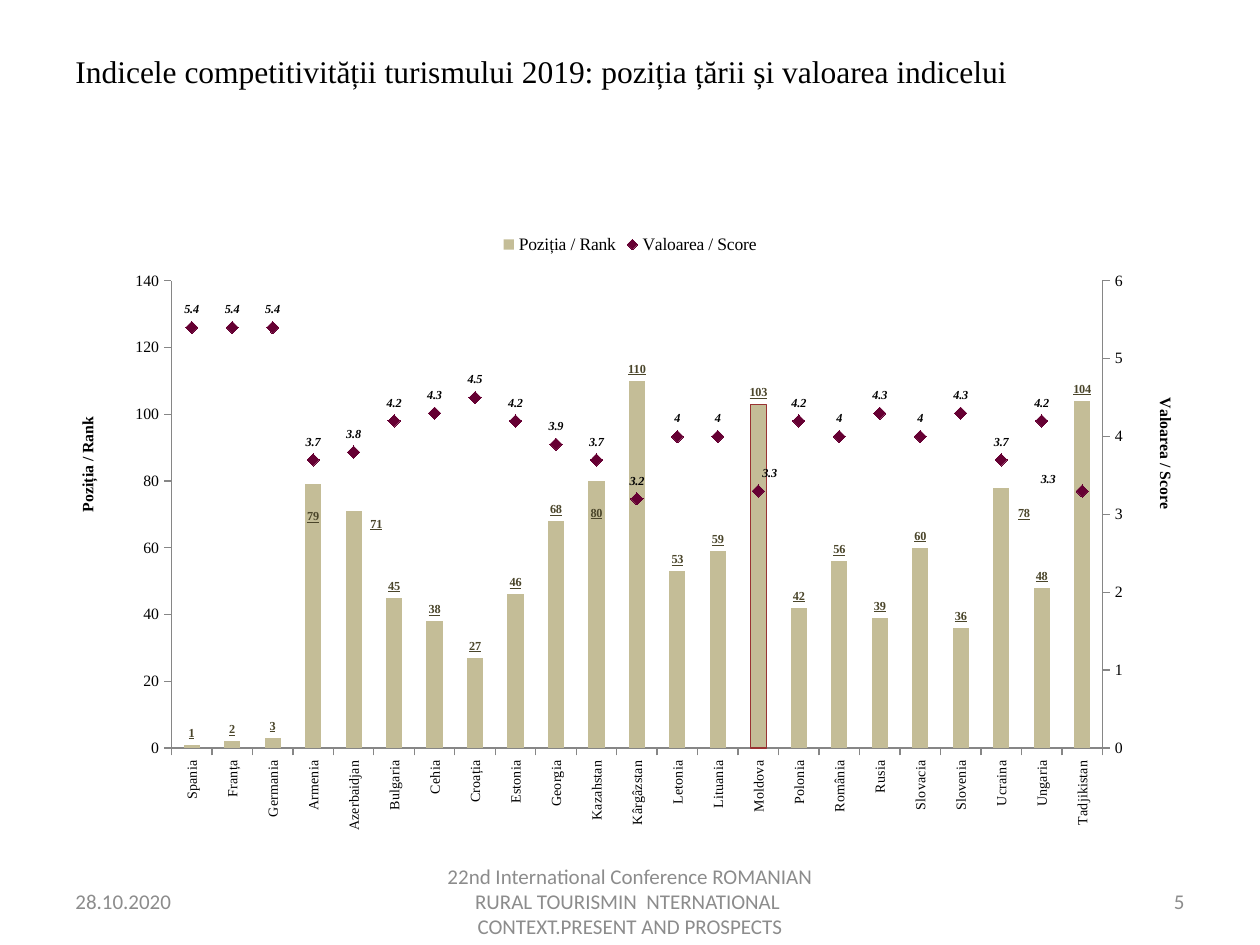
from pptx import Presentation
from pptx.chart.axis import ValueAxis
from pptx.chart.data import CategoryChartData
from pptx.dml.color import RGBColor
from pptx.enum.chart import (XL_CHART_TYPE, XL_LABEL_POSITION, XL_LEGEND_POSITION,
                             XL_MARKER_STYLE, XL_TICK_LABEL_POSITION, XL_TICK_MARK)
from pptx.enum.text import MSO_ANCHOR, PP_ALIGN
from pptx.oxml import parse_xml
from pptx.oxml.ns import qn
from pptx.util import Pt

SERIF = "Times New Roman"
CHART_NS = 'xmlns:c="http://schemas.openxmlformats.org/drawingml/2006/chart"'
LABEL_NS = 'xmlns:c15="http://schemas.microsoft.com/office/drawing/2012/chart"'
SCORES = [
    ("Spania", 1, 5.4), ("Franța", 2, 5.4), ("Germania", 3, 5.4), ("Armenia", 79, 3.7),
    ("Azerbaidjan", 71, 3.8), ("Bulgaria", 45, 4.2), ("Cehia", 38, 4.3), ("Croația", 27, 4.5),
    ("Estonia", 46, 4.2), ("Georgia", 68, 3.9), ("Kazahstan", 80, 3.7), ("Kârgâzstan", 110, 3.2),
    ("Letonia", 53, 4), ("Lituania", 59, 4), ("Moldova", 103, 3.3), ("Polonia", 42, 4.2),
    ("România", 56, 4), ("Rusia", 39, 4.3), ("Slovacia", 60, 4), ("Slovenia", 36, 4.3),
    ("Ucraina", 78, 3.7), ("Ungaria", 48, 4.2), ("Tadjikistan", 104, 3.3),
]
COUNTRIES, RANKS, VALUES = zip(*SCORES)
RANK_SHIFTS = {"Armenia": (0, 0.07), "Azerbaidjan": (0.02, 0.04),
               "Kazahstan": (0, 0.07), "Ucraina": (0.02, 0.06)}
SCORE_SHIFTS = {"Moldova": (0.01, 0), "Tadjikistan": (-0.03, 0.01)}


def color(value):
    """Turn a hex string into a colour."""
    return RGBColor.from_string(value)


def style_font(font, size, name=SERIF, tint="000000", bold=False, italic=False, underline=False):
    """Set every property of a font."""
    font.size, font.name = Pt(size), name
    font.bold, font.italic, font.underline = bold, italic, underline
    font.color.rgb = color(tint)


def add_text(slide, box, text, size, name, tint, align=PP_ALIGN.LEFT, anchor=MSO_ANCHOR.TOP):
    """Add one wrapped paragraph in the given box."""
    frame = slide.shapes.add_textbox(*map(Pt, box)).text_frame
    frame.word_wrap = True
    frame.vertical_anchor = anchor
    para = frame.paragraphs[0]
    para.text = text
    para.alignment = align
    style_font(para.runs[0].font, size, name, tint)


def add_footer(slide, box):
    """Place date, conference name and slide number along the footer box."""
    left, top, width, height = box
    side, middle = 168, 228
    conference = ("22nd International Conference ROMANIAN RURAL TOURISMIN  "
                  "NTERNATIONAL  CONTEXT.PRESENT AND PROSPECTS")
    parts = [
        (left, side, "28.10.2020", PP_ALIGN.LEFT),
        (left + (width - middle) / 2, middle, conference, PP_ALIGN.CENTER),
        (left + width - side, side, "5", PP_ALIGN.RIGHT),
    ]
    for start, span, text, align in parts:
        add_text(slide, (start, top, span, height), text, 12, "Calibri", "8C8C8C",
                 align, MSO_ANCHOR.MIDDLE)


def set_layout(element, index, **values):
    """Give a chart part a manual layout in fractions of the chart."""
    for old in element.findall(qn("c:layout")):
        element.remove(old)
    items = "".join(f'<c:{key} val="{value}"/>' for key, value in values.items())
    element.insert(index, parse_xml(
        f"<c:layout {CHART_NS}><c:manualLayout>{items}</c:manualLayout></c:layout>"))


def move_to_line(chart):
    """Move the second series to a line plot on a right axis and return that axis."""
    plot_area = chart.plots[0]._element.getparent()
    series = chart.plots[0].series[1]._element
    for flag in series.findall(qn("c:invertIfNegative")):
        series.remove(flag)
    line = parse_xml(
        f'<c:lineChart {CHART_NS}><c:grouping val="standard"/><c:varyColors val="0"/>'
        '<c:marker val="1"/><c:axId val="5001"/><c:axId val="5002"/></c:lineChart>')
    line.insert(2, series)
    chart.plots[0]._element.addnext(line)
    scaling = '<c:scaling><c:orientation val="minMax"/></c:scaling>'
    plot_area.append(parse_xml(
        f'<c:valAx {CHART_NS}><c:axId val="5002"/>{scaling}<c:delete val="0"/>'
        '<c:axPos val="r"/><c:numFmt formatCode="General" sourceLinked="0"/>'
        '<c:crossAx val="5001"/><c:crosses val="max"/>'
        '<c:crossBetween val="between"/></c:valAx>'))
    right_axis = ValueAxis(plot_area[-1])
    plot_area.append(parse_xml(
        f'<c:catAx {CHART_NS}><c:axId val="5001"/>{scaling}<c:delete val="1"/>'
        '<c:axPos val="b"/><c:crossAx val="5002"/><c:crosses val="autoZero"/></c:catAx>'))
    return right_axis


def style_axis(axis, size):
    """Style the line, ticks and tick labels of an axis."""
    axis.has_major_gridlines = False
    axis.major_tick_mark = XL_TICK_MARK.OUTSIDE
    axis.minor_tick_mark = XL_TICK_MARK.NONE
    axis.tick_label_position = XL_TICK_LABEL_POSITION.NEXT_TO_AXIS
    axis.format.line.color.rgb = color("868686")
    axis.format.line.width = Pt(0.75)
    style_font(axis.tick_labels.font, size)


def style_value_axis(axis, title, maximum, unit, rotation, left, top):
    """Scale a value axis and place its rotated title."""
    style_axis(axis, 9)
    axis.minimum_scale, axis.maximum_scale, axis.major_unit = 0, maximum, unit
    frame = axis.axis_title.text_frame
    frame.text = title
    style_font(frame.paragraphs[0].runs[0].font, 9, bold=True)
    frame._txBody.bodyPr.set("rot", str(rotation * 60000))
    frame._txBody.bodyPr.set("vert", "horz")
    set_layout(axis.axis_title._element, 1, xMode="edge", yMode="edge", x=left, y=top)


def label_series(series, position, shifts, **style):
    """Show values on a series, moving some labels without leader lines."""
    labels = series.data_labels
    labels.show_value = True
    labels.position = position
    style_font(labels.font, 7, bold=True, **style)
    for country in shifts:
        label = series.points[COUNTRIES.index(country)].data_label
        style_font(label.font, 7, bold=True, **style)
        label.position = position
    for element, (across, down) in zip(series._element.iter(qn("c:dLbl")), shifts.values()):
        set_layout(element, 1, x=across, y=down)
    for leader in labels._element.findall(qn("c:showLeaderLines")):
        leader.set("val", "0")
    labels._element.append(parse_xml(
        f'<c:extLst {CHART_NS}><c:ext {LABEL_NS} uri="{{CE6537A1-D6FC-4f65-9D91-7224C49458BB}}">'
        '<c15:showLeaderLines val="0"/></c:ext></c:extLst>'))


def add_rank_chart(slide, box):
    """Add the chart of ranks as columns and scores as markers."""
    data = CategoryChartData()
    data.categories = COUNTRIES
    data.add_series("Poziția / Rank", RANKS)
    data.add_series("Valoarea / Score", VALUES)
    chart = slide.shapes.add_chart(XL_CHART_TYPE.COLUMN_CLUSTERED, *map(Pt, box), data).chart
    style_font(chart.font, 10, "Calibri")
    chart.has_title = False
    chart.has_legend = True
    chart.legend.position = XL_LEGEND_POSITION.TOP
    chart.legend.include_in_layout = False
    style_font(chart.legend.font, 10)

    left_axis = chart.value_axis
    right_axis = move_to_line(chart)
    width, height = box[2:]
    set_layout(chart.plots[0]._element.getparent(), 0, layoutTarget="inner", xMode="edge",
               yMode="edge", x=62 / width, y=34.5 / height, w=532 / width, h=267 / height)
    style_axis(chart.category_axis, 8)
    body = chart.category_axis._element.find(qn("c:txPr")).find(qn("a:bodyPr"))
    body.set("rot", str(-90 * 60000))
    body.set("vert", "horz")
    style_value_axis(left_axis, "Poziția / Rank", 140, 20, -90, 0.01, 0.31)
    style_value_axis(right_axis, "Valoarea / Score", 6, 1, 90, 0.96, 0.28)

    columns, line = chart.plots
    columns.vary_by_categories = False
    columns.gap_width = 150
    ranks, scores = columns.series[0], line.series[0]
    ranks.format.fill.solid()
    ranks.format.fill.fore_color.rgb = color("C4BD97")
    moldova = ranks.points[COUNTRIES.index("Moldova")].format
    moldova.fill.solid()
    moldova.fill.fore_color.rgb = color("C4BD97")
    moldova.line.color.rgb = color("993333")
    moldova.line.width = Pt(0.75)
    label_series(ranks, XL_LABEL_POSITION.OUTSIDE_END, RANK_SHIFTS,
                 tint="4A452A", underline=True)

    scores.smooth = False
    scores.format.line.fill.background()
    scores.marker.style = XL_MARKER_STYLE.DIAMOND
    scores.marker.size = 7
    scores.marker.format.fill.solid()
    scores.marker.format.fill.fore_color.rgb = color("660033")
    scores.marker.format.line.color.rgb = color("660033")
    label_series(scores, XL_LABEL_POSITION.ABOVE, SCORE_SHIFTS, italic=True)


def main():
    """Build and save the deck."""
    deck = Presentation()
    deck.slide_width, deck.slide_height = Pt(720), Pt(540)
    slide = deck.slides.add_slide(deck.slide_layouts[6])
    add_footer(slide, (36, 500.5, 648, 28.8))
    add_rank_chart(slide, (36, 126, 648, 356.4))
    add_text(slide, (36, 26, 630, 29), "Indicele competitivității turismului 2019: "
             "poziția țării și valoarea indicelui", 18, SERIF, "000000")
    deck.save("out.pptx")


if __name__ == "__main__":
    main()
